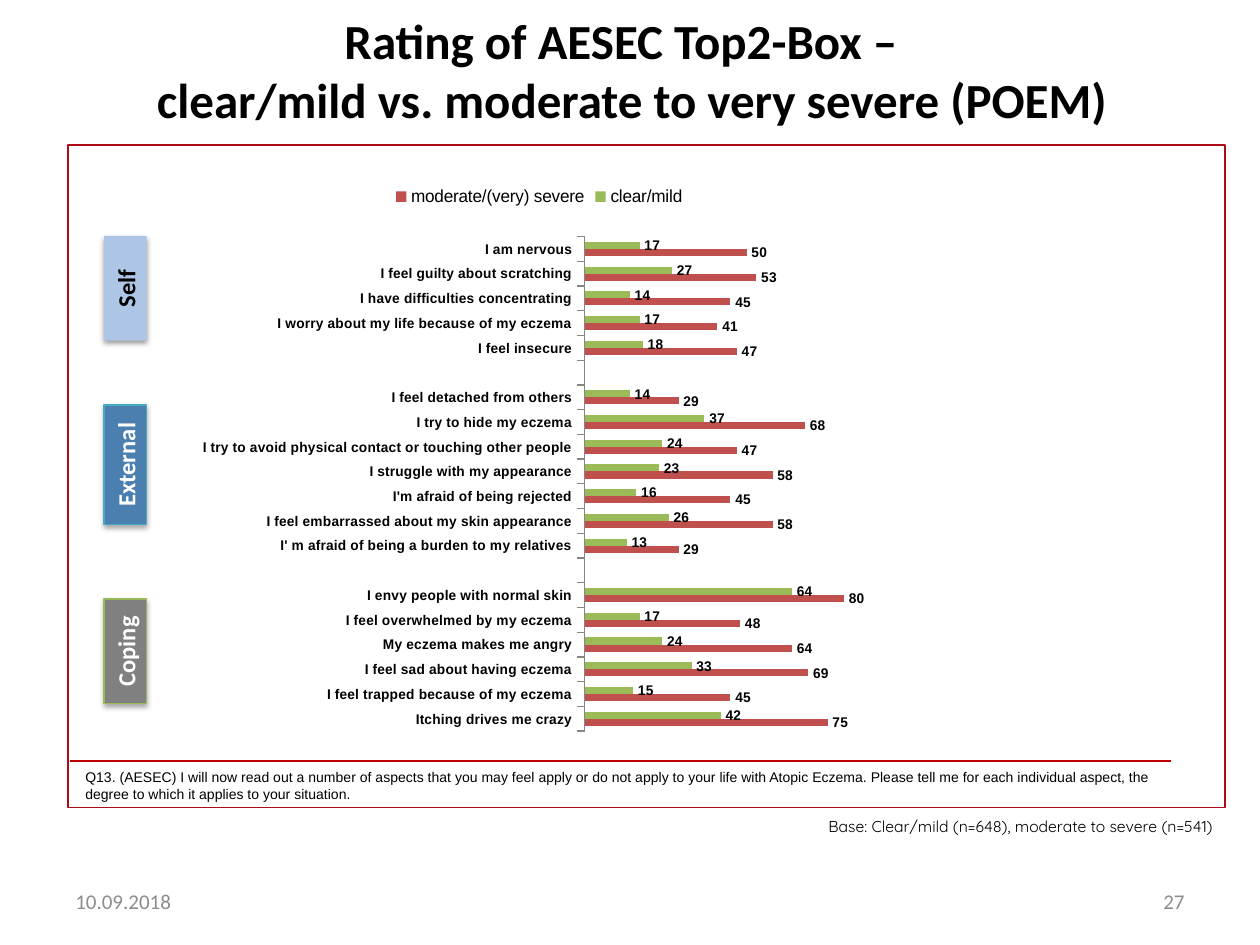
"""Build the slide comparing eczema ratings by severity."""
from dataclasses import dataclass
from typing import Any, Optional

import lxml.etree
import pptx
import pptx.chart.data
import pptx.dml.color
import pptx.enum.chart
import pptx.enum.shapes
import pptx.enum.text
import pptx.oxml
import pptx.oxml.ns
import pptx.util

Cm = pptx.util.Cm
Pt = pptx.util.Pt
RGBColor = pptx.dml.color.RGBColor
PP_ALIGN = pptx.enum.text.PP_ALIGN
MSO_ANCHOR = pptx.enum.text.MSO_ANCHOR
qn = pptx.oxml.ns.qn

BLACK = RGBColor(0x00, 0x00, 0x00)
WHITE = RGBColor(0xFF, 0xFF, 0xFF)
GREY = RGBColor(0x8C, 0x8C, 0x8C)
AXIS_GREY = RGBColor(0x86, 0x86, 0x86)
FRAME_RED = RGBColor(0xAE, 0x09, 0x17)
RULE_RED = RGBColor(0xC0, 0x00, 0x00)
GREEN = RGBColor(0x9B, 0xBB, 0x59)
RED = RGBColor(0xC0, 0x50, 0x4D)
LIGHT_BLUE = RGBColor(0xAD, 0xC6, 0xE5)
BLUE = RGBColor(0x4A, 0x7F, 0xB0)
TEAL = RGBColor(0x46, 0xAA, 0xC5)
DARK_GREY = RGBColor(0x80, 0x80, 0x80)
LINE_GREEN = RGBColor(0x98, 0xB9, 0x55)

RATINGS = [
    ("I am nervous", 17, 50),
    ("I feel guilty about scratching", 27, 53),
    ("I have difficulties concentrating", 14, 45),
    ("I worry about my life because of my eczema", 17, 41),
    ("I feel insecure", 18, 47),
    ("", None, None),
    ("I feel detached from others", 14, 29),
    ("I try to hide my eczema", 37, 68),
    ("I try to avoid physical contact or touching other people", 24, 47),
    ("I struggle with my appearance", 23, 58),
    ("I'm afraid of being rejected", 16, 45),
    ("I feel embarrassed about my skin appearance", 26, 58),
    ("I' m afraid of being a burden to my relatives", 13, 29),
    ("", None, None),
    ("I envy people with normal skin", 64, 80),
    ("I feel overwhelmed by my eczema", 17, 48),
    ("My eczema makes me angry", 24, 64),
    ("I feel sad about having eczema", 33, 69),
    ("I feel trapped because of my eczema", 15, 45),
    ("Itching drives me crazy", 42, 75),
]


@dataclass
class Tag:
    text: str
    middle: float
    length: float
    fill: RGBColor
    color: RGBColor
    line: Optional[RGBColor]
    alpha: int


@dataclass
class Note:
    text: str
    box: tuple[float, float, float, float]
    size: float
    font: str
    color: RGBColor
    align: Any
    anchor: Any
    margins: tuple[float, float]


TAGS = [
    Tag("Self", 5.81, 2.11, LIGHT_BLUE, BLACK, None, 38),
    Tag("External", 9.37, 2.41, BLUE, WHITE, TEAL, 35),
    Tag("Coping", 13.13, 2.11, DARK_GREY, WHITE, LINE_GREEN, 35),
]
QUESTION = (
    "Q13. (AESEC) I will now read out a number of aspects that you may feel apply or do not "
    "apply to your life with Atopic Eczema. Please tell me for each individual aspect, "
    "the degree to which it applies to your situation."
)
NOTES = [
    Note(QUESTION, (1.42, 15.34, 22.17, 0.99), 8, "Arial", BLACK,
         PP_ALIGN.LEFT, MSO_ANCHOR.TOP, (0.3, 0.15)),
    Note("Base: Clear/mild (n=648), moderate to severe (n=541)", (15.09, 16.31, 9.65, 0.69),
         9, "Quicksand", BLACK, PP_ALIGN.RIGHT, MSO_ANCHOR.TOP, (0.3, 0.15)),
    Note("10.09.2018", (1.27, 17.65, 5.92, 1.02), 12, "Calibri", GREY,
         PP_ALIGN.LEFT, MSO_ANCHOR.MIDDLE, (0.25, 0.13)),
    Note("27", (18.21, 17.65, 5.92, 1.02), 12, "Calibri", GREY,
         PP_ALIGN.RIGHT, MSO_ANCHOR.MIDDLE, (0.25, 0.13)),
]


def style_font(font, size: float, name: str, color: RGBColor = BLACK, bold: bool = False) -> None:
    font.size, font.name, font.bold = Pt(size), name, bold
    font.color.rgb = color


def write(sp, text: str, *, size: float, font: str = "Calibri", color: RGBColor = BLACK,
          bold: bool = False, align=PP_ALIGN.CENTER, anchor=MSO_ANCHOR.MIDDLE,
          margins: tuple[float, float] = (0.25, 0.13)) -> None:
    tf = sp.text_frame
    tf.word_wrap, tf.vertical_anchor = True, anchor
    tf.margin_left = tf.margin_right = Cm(margins[0])
    tf.margin_top = tf.margin_bottom = Cm(margins[1])
    p = tf.paragraphs[0]
    p.text, p.alignment = text, align
    for r in p.runs:
        style_font(r.font, size, font, color, bold)


def add_rect(s, left: float, top: float, width: float, height: float,
             fill: Optional[RGBColor], line: Optional[RGBColor], weight: float):
    sp = s.shapes.add_shape(pptx.enum.shapes.MSO_SHAPE.RECTANGLE,
                            Cm(left), Cm(top), Cm(width), Cm(height))
    sp.shadow.inherit = False
    if fill is None:
        sp.fill.background()
    else:
        sp.fill.solid()
        sp.fill.fore_color.rgb = fill
    if line is None:
        sp.line.fill.background()
    else:
        sp.line.color.rgb = line
        sp.line.width = Pt(weight)
    return sp


def add_tag(s, tag: Tag) -> None:
    thick = 0.86
    sp = add_rect(s, 2.53 - tag.length / 2, tag.middle - thick / 2, tag.length, thick,
                  tag.fill, tag.line, 0.75)
    sp.rotation = 270
    effects = sp._element.spPr.find(qn("a:effectLst"))
    shadow = lxml.etree.SubElement(effects, qn("a:outerShdw"), blurRad=str(Pt(3.1)),
                                   dist=str(Pt(1.7)), dir="5400000", rotWithShape="0")
    color = lxml.etree.SubElement(shadow, qn("a:srgbClr"), val="000000")
    lxml.etree.SubElement(color, qn("a:alpha"), val=str(tag.alpha * 1000))
    write(sp, tag.text, size=14, color=tag.color, bold=True)


def add_note(s, note: Note) -> None:
    sp = s.shapes.add_textbox(*map(Cm, note.box))
    write(sp, note.text, size=note.size, font=note.font, color=note.color,
          align=note.align, anchor=note.anchor, margins=note.margins)


def add_rule(s) -> None:
    line = s.shapes.add_connector(pptx.enum.shapes.MSO_CONNECTOR.STRAIGHT,
                                  Cm(1.42), Cm(15.34), Cm(23.6), Cm(15.34))
    line.line.color.rgb, line.line.width = RULE_RED, Pt(0.75)
    lxml.etree.SubElement(line._element.spPr, qn("a:effectLst"))


def place_plot(chart, **box: float) -> None:
    area = chart._chartSpace.chart.plotArea
    for old in area.findall(qn("c:layout")):
        area.remove(old)
    layout = lxml.etree.Element(qn("c:layout"))
    manual = lxml.etree.SubElement(layout, qn("c:manualLayout"))
    settings = {"layoutTarget": "inner", "xMode": "edge", "yMode": "edge", **box}
    for name, value in settings.items():
        lxml.etree.SubElement(manual, qn(f"c:{name}"), val=str(value))
    area.insert(0, layout)


def add_ratings(s) -> None:
    names, mild, severe = zip(*RATINGS)
    data = pptx.chart.data.CategoryChartData()
    data.categories = names
    data.add_series("clear/mild", mild)
    data.add_series("moderate/(very) severe", severe)
    chart = s.shapes.add_chart(pptx.enum.chart.XL_CHART_TYPE.BAR_CLUSTERED,
                               Cm(4.09), Cm(3.48), Cm(13.34), Cm(11.73), data).chart
    style_font(chart.font, 18, "Calibri")
    chart.has_title = False
    chart.has_legend = True
    chart.legend.position = pptx.enum.chart.XL_LEGEND_POSITION.TOP
    chart.legend.include_in_layout = False
    style_font(chart.legend.font, 10, "Arial")
    cat, val = chart.category_axis, chart.value_axis
    cat.reverse_order = True
    cat.major_tick_mark = pptx.enum.chart.XL_TICK_MARK.OUTSIDE
    cat.format.line.color.rgb = AXIS_GREY
    style_font(cat.tick_labels.font, 8, "Arial", bold=True)
    val.minimum_scale, val.maximum_scale, val.major_unit = 0, 80, 20
    val.has_major_gridlines = val.visible = False
    plot = chart.plots[0]
    plot.gap_width, plot.overlap, plot.vary_by_categories = 150, 0, False
    for series, color in zip(plot.series, (GREEN, RED)):
        series.format.fill.solid()
        series.format.fill.fore_color.rgb = color
        labels = series.data_labels
        labels.show_value = True
        labels.position = pptx.enum.chart.XL_LABEL_POSITION.OUTSIDE_END
        labels.number_format, labels.number_format_is_linked = "#,##0", False
        style_font(labels.font, 8, "Arial", bold=True)
    place_plot(chart, x=0.57, y=0.11, w=0.4, h=0.85)


def main() -> None:
    prs = pptx.Presentation()
    prs.slide_width, prs.slide_height = Cm(25.4), Cm(19.05)
    s = prs.slides.add_slide(prs.slide_layouts[5])
    title = s.shapes.title
    title.left, title.top, title.width, title.height = map(Cm, (1.32, 0.69, 22.61, 1.42))
    write(title, "Rating of AESEC Top2-Box – \v clear/mild vs. moderate to very severe (POEM)",
          size=28, bold=True)
    add_rect(s, 1.37, 2.92, 23.32, 13.36, None, FRAME_RED, 1)
    for note in NOTES:
        add_note(s, note)
    add_rule(s)
    add_ratings(s)
    for tag in TAGS:
        add_tag(s, tag)
    prs.save("out.pptx")


if __name__ == "__main__":
    main()
